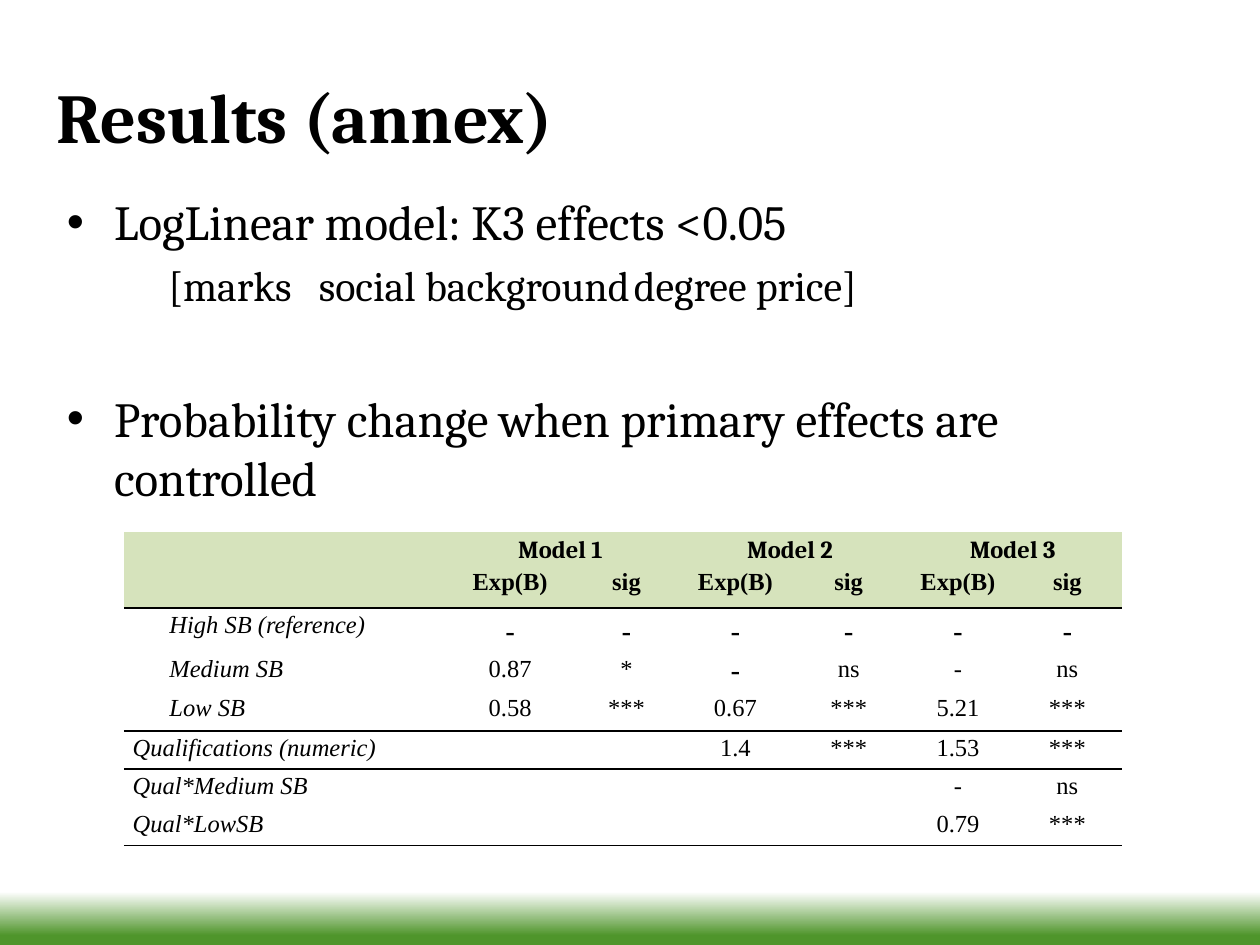
import dataclasses

import lxml.etree
import pptx
import pptx.dml.color
import pptx.enum.dml
import pptx.enum.shapes
import pptx.enum.text
import pptx.oxml.ns
import pptx.table
import pptx.text.text
import pptx.util

Pt = pptx.util.Pt
qn = pptx.oxml.ns.qn
Align = pptx.enum.text.PP_ALIGN

COLOURS = {"ink": "000000", "paper": "FFFFFF", "band": "4F952B", "header": "D6E3BC"}
HEADING_FONT, TABLE_FONT, DASH_FONT = "Cambria", "Times New Roman", "Calibri"
NO_STYLE = "{2D5ABB26-0587-4C30-8999-92F81FD0307C}"
COLUMN_WIDTHS = (183, 75.5, 57.5, 67, 62.5, 62.5, 62.5)
CELL_MARGIN = 5


@dataclasses.dataclass(frozen=True)
class ModelRow:
    label: str
    values: tuple[str, ...]
    height: float
    font: str = TABLE_FONT
    header: bool = False
    ruled: bool = False
    indent: float = 0
    big_dashes: tuple[int, ...] = ()
    dash_spacing: float = 1.15


ROWS = (
    ModelRow("", ("Model 1", "", "Model 2", "", "Model 3", ""), 18.9,
             font=HEADING_FONT, header=True),
    ModelRow("", ("Exp(B)", "sig") * 3, 24.5, header=True, ruled=True),
    ModelRow("High SB (reference)", ("-",) * 6, 25.3, indent=21,
             big_dashes=(1, 2, 3, 4, 5, 6)),
    ModelRow("Medium SB", ("0.87", "*", "-", "ns", "-", "ns"), 22, indent=21,
             big_dashes=(3,), dash_spacing=1),
    ModelRow("Low SB", ("0.58", "***", "0.67", "***", "5.21", "***"), 23,
             indent=21, ruled=True),
    ModelRow("Qualifications (numeric)", ("", "", "1.4", "***", "1.53", "***"), 21.8,
             ruled=True),
    ModelRow("Qual*Medium SB", ("", "", "", "", "-", "ns"), 21.8),
    ModelRow("Qual*LowSB", ("", "", "", "", "0.79", "***"), 21.8, ruled=True),
)


def rgb(name: str) -> pptx.dml.color.RGBColor:
    return pptx.dml.color.RGBColor.from_string(COLOURS[name])


def write(paragraph: pptx.text.text._Paragraph, text: str, *, size: float,
          font: str = HEADING_FONT, bold: bool = False, italic: bool = False,
          align: Align = Align.LEFT, before: float = 0, spacing: float = 1) -> None:
    paragraph.alignment = align
    paragraph.space_before = Pt(before)
    paragraph.line_spacing = spacing
    if not text:
        paragraph._p.get_or_add_endParaRPr().set("sz", str(int(size * 100)))
        return
    run = paragraph.add_run()
    run.text = text
    run.font.size = Pt(size)
    run.font.name = font
    run.font.bold = bold
    run.font.italic = italic
    run.font.color.rgb = rgb("ink")


def place(shape, left: float, top: float, width: float, height: float) -> None:
    shape.left, shape.top, shape.width, shape.height = map(Pt, (left, top, width, height))


def set_indent(paragraph: pptx.text.text._Paragraph, margin: float, first: float,
               bullet: str = "", tabs: tuple[float, ...] = ()) -> None:
    properties = paragraph._p.get_or_add_pPr()
    properties.set("marL", str(Pt(margin)))
    properties.set("indent", str(Pt(first)))
    if bullet:
        lxml.etree.SubElement(properties, qn("a:buChar"), char=bullet)
    else:
        lxml.etree.SubElement(properties, qn("a:buNone"))
    if tabs:
        stops = lxml.etree.SubElement(properties, qn("a:tabLst"))
        for position in tabs:
            lxml.etree.SubElement(stops, qn("a:tab"), pos=str(Pt(position)), algn="l")


def rule_below(cell: pptx.table._Cell) -> None:
    line = lxml.etree.Element(qn("a:lnB"), w=str(Pt(1)))
    fill = lxml.etree.SubElement(line, qn("a:solidFill"))
    lxml.etree.SubElement(fill, qn("a:srgbClr"), val=COLOURS["ink"])
    cell._tc.get_or_add_tcPr().insert(0, line)


def fill_cell(cell: pptx.table._Cell, row: ModelRow, column: int, text: str) -> None:
    cell.margin_left = Pt(CELL_MARGIN + (row.indent if column == 0 else 0))
    cell.margin_right = Pt(CELL_MARGIN)
    cell.margin_top = cell.margin_bottom = 0
    if row.header:
        cell.fill.solid()
        cell.fill.fore_color.rgb = rgb("header")
    else:
        cell.fill.background()
    if row.ruled:
        rule_below(cell)
    big = column in row.big_dashes
    write(cell.text_frame.paragraphs[0], text,
          size=18 if big else 14,
          font=DASH_FONT if big else row.font,
          bold=row.header, italic=column == 0,
          align=Align.CENTER if column else Align.JUSTIFY,
          spacing=row.dash_spacing if big else 1.15)


def add_model_table(slide) -> None:
    frame = slide.shapes.add_table(
        len(ROWS), len(COLUMN_WIDTHS), Pt(70.8), Pt(304),
        Pt(sum(COLUMN_WIDTHS)), Pt(sum(row.height for row in ROWS)))
    models = frame.table
    models.first_row = models.horz_banding = False
    models._tbl.tblPr.find(qn("a:tableStyleId")).text = NO_STYLE
    for column, width in zip(models.columns, COLUMN_WIDTHS):
        column.width = Pt(width)
    for index, row in enumerate(ROWS):
        models.rows[index].height = Pt(row.height)
        for column, text in enumerate((row.label, *row.values)):
            fill_cell(models.cell(index, column), row, column, text)
    for column in (1, 3, 5):
        models.cell(0, column).merge(models.cell(0, column + 1))


def add_footer_band(slide) -> None:
    band = slide.shapes.add_shape(pptx.enum.shapes.MSO_SHAPE.RECTANGLE,
                                  0, Pt(508.3), Pt(720), Pt(31.7))
    band.shadow.inherit = False
    band.line.fill.background()
    band.fill.gradient()
    band.fill.gradient_angle = 90
    for stop, position, colour in zip(band.fill.gradient_stops, (0.17, 0.96),
                                      ("band", "paper")):
        stop.position = position
        stop.color.rgb = rgb(colour)


def add_findings(body) -> None:
    place(body, 31, 106, 659, 368.6)
    findings = body.text_frame
    findings.auto_size = pptx.enum.text.MSO_AUTO_SIZE.NONE
    effects = findings.paragraphs[0]
    set_indent(effects, 27, -27, bullet="•")
    write(effects, "LogLinear model: K3 effects <0.05", size=28)
    variables = findings.add_paragraph()
    variables.level = 1
    set_indent(variables, 0, 58, tabs=(143.5, 337))
    write(variables, "[marks\tsocial background\tdegree price]", size=24, before=5)
    change = findings.add_paragraph()
    set_indent(change, 27, -27, bullet="•")
    write(change, "Probability change when primary effects are controlled",
          size=28, before=45)


def main() -> None:
    deck = pptx.Presentation()
    deck.slide_width, deck.slide_height = Pt(720), Pt(540)
    slide = deck.slides.add_slide(deck.slide_layouts[1])
    add_footer_band(slide)
    title, body = slide.placeholders
    place(title, 25.2, 21, 648, 90)
    title.text_frame.auto_size = pptx.enum.text.MSO_AUTO_SIZE.NONE
    write(title.text_frame.paragraphs[0], "Results (annex)", size=40, bold=True)
    add_findings(body)
    add_model_table(slide)
    deck.save("out.pptx")


if __name__ == "__main__":
    main()
